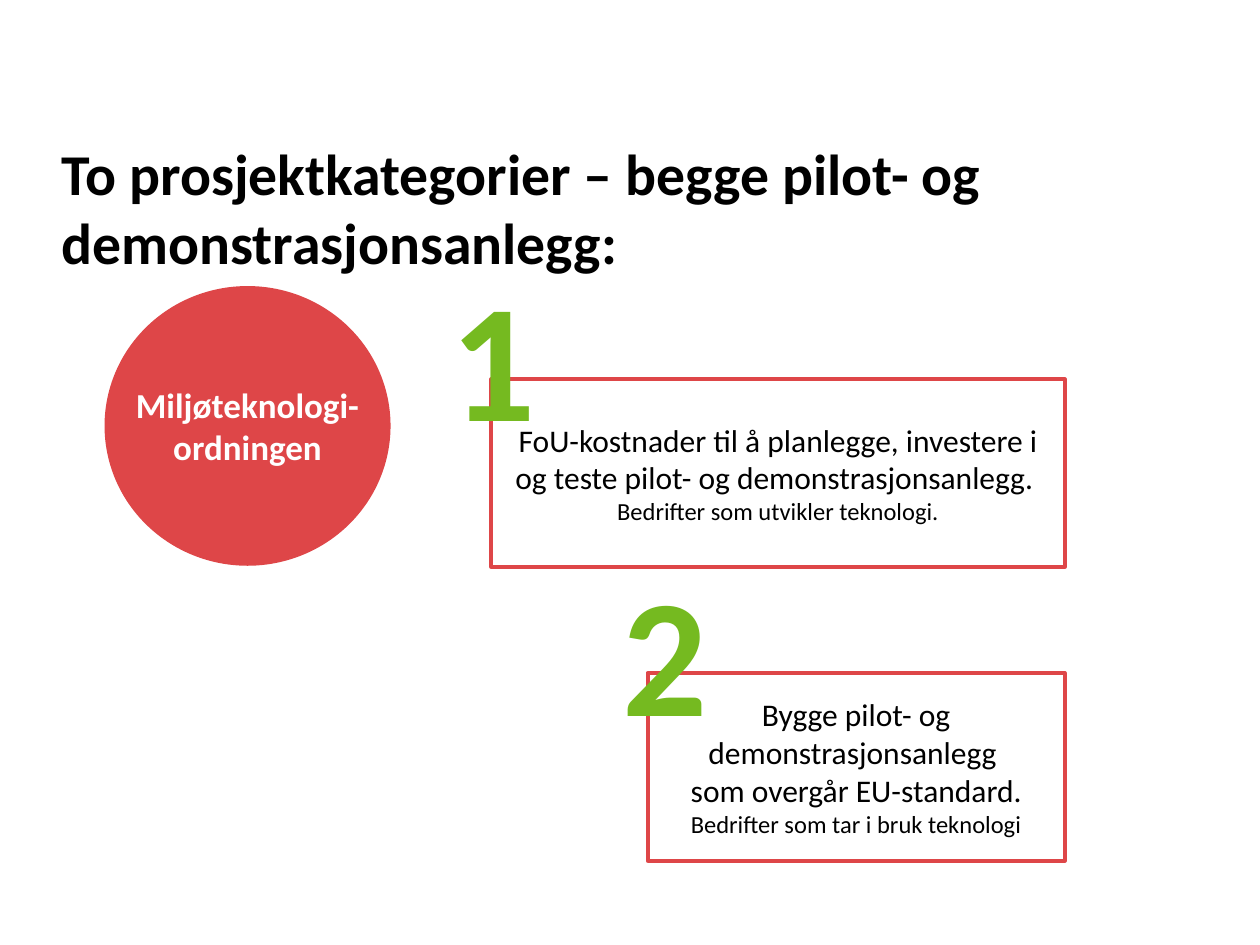
from pptx import Presentation
from pptx.dml.color import RGBColor
from pptx.enum.shapes import MSO_SHAPE
from pptx.enum.text import MSO_ANCHOR, MSO_AUTO_SIZE, PP_ALIGN
from pptx.util import Inches, Pt

COLORS = {"red": "DE4648", "green": "75BA20", "white": "FFFFFF", "black": "000000"}


def color(name):
    return RGBColor.from_string(COLORS[name])


def write(frame, lines, tint, bold=False, align=PP_ALIGN.CENTER):
    for i, (text, size) in enumerate(lines):
        para = frame.add_paragraph() if i else frame.paragraphs[0]
        para.text = text
        para.alignment = align
        for run in para.runs:
            font = run.font
            font.name = "Calibri"
            font.size = Pt(size)
            font.bold = bold
            font.color.rgb = color(tint)


def add_title(slide, text):
    title = slide.shapes.title
    title.left, title.top = Inches(0.49), Inches(1.02)
    title.width, title.height = Inches(9.18), Inches(1.17)
    frame = title.text_frame
    frame.auto_size = MSO_AUTO_SIZE.NONE
    frame.word_wrap = True
    frame.vertical_anchor = MSO_ANCHOR.BOTTOM
    frame.margin_left = frame.margin_right = 0
    frame.margin_top = frame.margin_bottom = 0
    write(frame, [(text, 33)], "black", True, PP_ALIGN.LEFT)


def add_form(slide, kind, place, fill):
    form = slide.shapes.add_shape(kind, *map(Inches, place))
    form.shadow.inherit = False
    form.fill.solid()
    form.fill.fore_color.rgb = color(fill)
    form.text_frame.vertical_anchor = MSO_ANCHOR.MIDDLE
    return form


def add_disc(slide, place, text):
    disc = add_form(slide, MSO_SHAPE.OVAL, place, "red")
    disc.line.fill.background()
    disc.text_frame.word_wrap = False
    write(disc.text_frame, [(text, 20)], "white", True)


def add_card(slide, place, main_text, note):
    card = add_form(slide, MSO_SHAPE.RECTANGLE, place, "white")
    card.line.color.rgb = color("red")
    card.line.width = Pt(2.25)
    card.text_frame.word_wrap = True
    write(card.text_frame, [(main_text, 18), (note, 14)], "black")


def add_digit(slide, place, text):
    box = slide.shapes.add_textbox(*map(Inches, place))
    box.text_frame.word_wrap = True
    write(box.text_frame, [(text, 96)], "green", True, PP_ALIGN.LEFT)


def main():
    deck = Presentation()
    deck.slide_width, deck.slide_height = Inches(10), Inches(7.5)
    slide = deck.slides.add_slide(deck.slide_layouts[5])
    add_title(slide, "To prosjektkategorier – begge pilot- og demonstrasjonsanlegg:")
    add_disc(slide, (0.83, 2.27, 2.27, 2.22), "Miljøteknologi-\vordningen")
    add_card(slide, (3.9, 3.01, 4.55, 1.49),
             "FoU-kostnader til å planlegge, investere i og teste pilot- og demonstrasjonsanlegg. ",
             "Bedrifter som utvikler teknologi.")
    add_card(slide, (5.14, 5.34, 3.31, 1.49),
             "Bygge pilot- og demonstrasjonsanlegg \vsom overgår EU-standard.",
             "Bedrifter som tar i bruk teknologi")
    add_digit(slide, (4.84, 4.3, 0.81, 1.72), "2")
    add_digit(slide, (3.48, 1.96, 1.11, 1.72), "1")
    deck.save("out.pptx")


if __name__ == "__main__":
    main()
